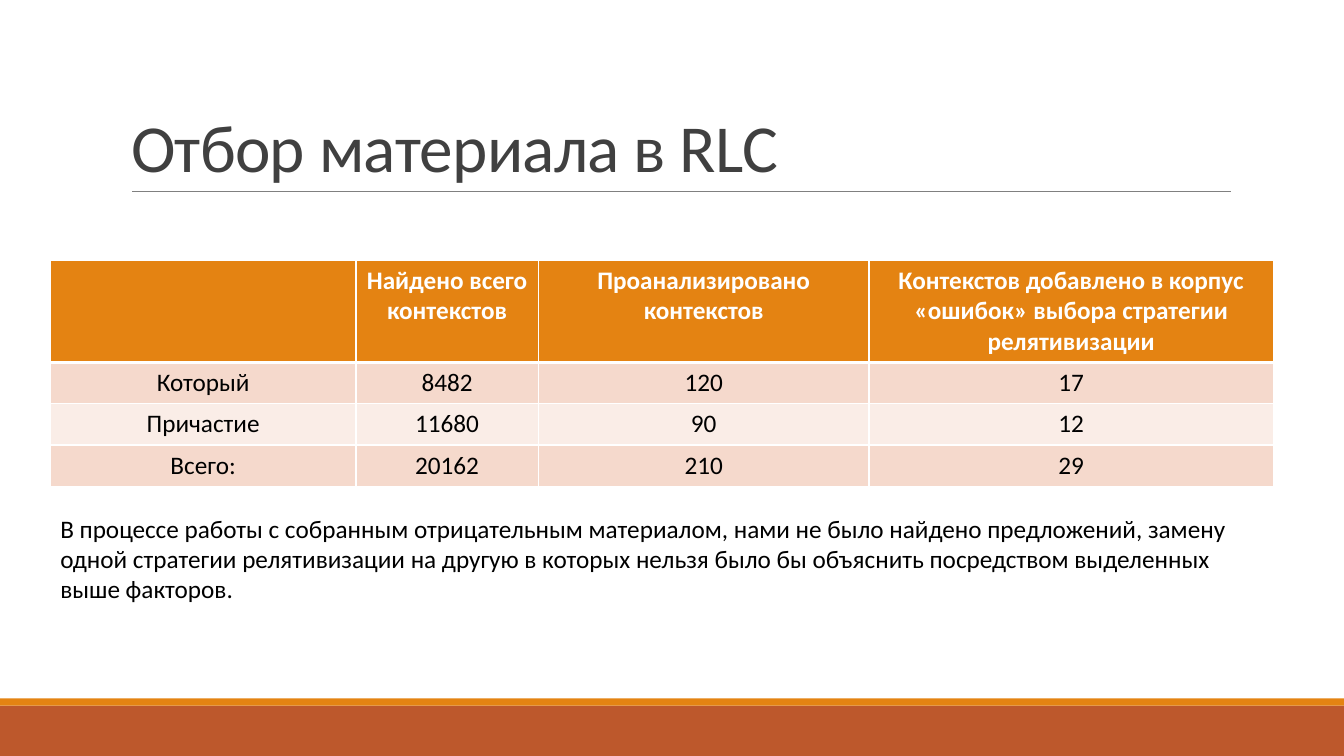
from dataclasses import dataclass

from lxml.etree import SubElement
from pptx import Presentation
from pptx.dml.color import RGBColor
from pptx.enum.shapes import MSO_CONNECTOR, MSO_SHAPE
from pptx.enum.text import MSO_ANCHOR, MSO_AUTO_SIZE, PP_ALIGN
from pptx.oxml import parse_xml
from pptx.oxml.ns import nsdecls, qn
from pptx.util import Inches, Pt


@dataclass(frozen=True)
class Theme:
    font: str = "Calibri"
    title_size: int = 48
    body_size: int = 18
    title: str = "404040"
    text: str = "000000"
    white: str = "FFFFFF"
    rule: str = "808080"
    orange: str = "E48312"
    rust: str = "BD582C"
    bands: tuple = ("F5D9CC", "FAEDE7")


theme = Theme()


def format_text(paragraph, size, color, bold=False):
    for run in paragraph.runs:
        run.font.name = theme.font
        run.font.size = Pt(size)
        run.font.bold = bold
        run.font.color.rgb = RGBColor.from_string(color)


def set_borders(cell, top, bottom):
    """Draw white cell borders; top and bottom are widths in points."""
    properties = cell._tc.get_or_add_tcPr()
    for index, (side, width) in enumerate(
        [("L", 1), ("R", 1), ("T", top), ("B", bottom)]
    ):
        properties.insert(index, parse_xml(
            f'<a:ln{side} {nsdecls("a")} w="{Pt(width)}"><a:solidFill>'
            f'<a:srgbClr val="{theme.white}"/></a:solidFill></a:ln{side}>'
        ))


presentation = Presentation()
presentation.slide_width = Inches(13.33)
presentation.slide_height = Inches(7.5)
slide = presentation.slides.add_slide(presentation.slide_layouts[5])
shapes = slide.shapes

# Footer bands and title rule
for top, height, color in [(7, 0.5, theme.rust), (6.93, 0.07, theme.orange)]:
    band = shapes.add_shape(
        MSO_SHAPE.RECTANGLE, 0, Inches(top), presentation.slide_width, Inches(height)
    )
    band.shadow.inherit = False
    band.fill.solid()
    band.fill.fore_color.rgb = RGBColor.from_string(color)
    band.line.fill.background()

rule = shapes.add_connector(
    MSO_CONNECTOR.STRAIGHT, Inches(1.31), Inches(1.9), Inches(12.21), Inches(1.9)
)
rule.line.color.rgb = RGBColor.from_string(theme.rule)
rule.line.width = Pt(0.5)
SubElement(rule._element.spPr, qn("a:effectLst"))

# Title
title = shapes.title
title.left, title.top = Inches(1.2), Inches(0.31)
title.width, title.height = Inches(11), Inches(1.59)
title.text_frame.text = "Отбор материала в RLC"
title.text_frame.auto_size = MSO_AUTO_SIZE.NONE
title.text_frame.vertical_anchor = MSO_ANCHOR.BOTTOM
heading = title.text_frame.paragraphs[0]
heading.alignment = PP_ALIGN.LEFT
heading.line_spacing = 0.85
format_text(heading, theme.title_size, theme.title)
heading.runs[0].font._element.set("spc", "-50")

# Table
left, content_width = Inches(0.5), Inches(12.13)
rows = [
    ["", "Найдено всего контекстов", "Проанализировано контекстов",
     "Контекстов добавлено в корпус «ошибок» выбора стратегии релятивизации"],
    ["Который", "8482", "120", "17"],
    ["Причастие", "11680", "90", "12"],
    ["Всего:", "20162", "210", "29"],
]
column_widths = [3.03, 1.81, 3.28, 4.01]
header_height, row_height = 0.99, 0.41
table = shapes.add_table(
    len(rows), len(column_widths), left, Inches(2.58), content_width,
    Inches(header_height + row_height * (len(rows) - 1)),
).table
for column, width in zip(table.columns, column_widths):
    column.width = Inches(width)

for row_index, values in enumerate(rows):
    is_header = row_index == 0
    table.rows[row_index].height = Inches(header_height if is_header else row_height)
    fill = theme.orange if is_header else theme.bands[(row_index - 1) % 2]
    for column_index, value in enumerate(values):
        cell = table.cell(row_index, column_index)
        cell.text_frame.text = value
        cell.fill.solid()
        cell.fill.fore_color.rgb = RGBColor.from_string(fill)
        set_borders(cell, top=3 if row_index == 1 else 1, bottom=3 if is_header else 1)
        paragraph = cell.text_frame.paragraphs[0]
        paragraph.alignment = PP_ALIGN.CENTER
        format_text(paragraph, theme.body_size,
                    theme.white if is_header else theme.text, is_header)

# Conclusion
conclusion = shapes.add_textbox(left, Inches(5.04), content_width, Inches(1.01))
conclusion.text_frame.word_wrap = True
conclusion.text_frame.auto_size = MSO_AUTO_SIZE.SHAPE_TO_FIT_TEXT
conclusion.text_frame.text = (
    "В процессе работы с собранным отрицательным материалом, нами не было найдено "
    "предложений, замену одной стратегии релятивизации на другую в которых нельзя "
    "было бы объяснить посредством выделенных выше факторов."
)
format_text(conclusion.text_frame.paragraphs[0], theme.body_size, theme.text)

presentation.save("out.pptx")
